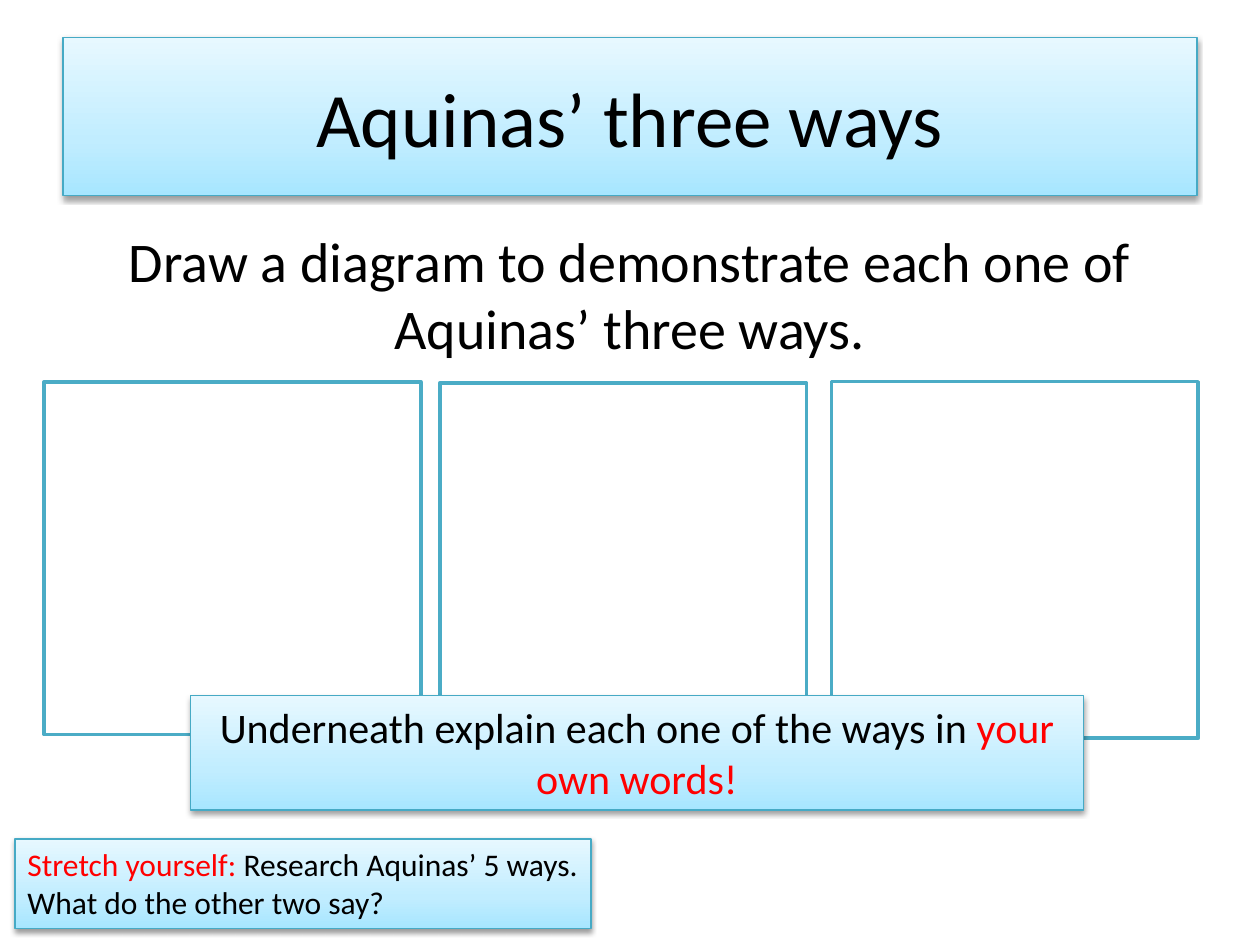
from pptx import Presentation
from pptx.dml.color import RGBColor as Rgb
from pptx.enum.shapes import MSO_SHAPE as Kind
from pptx.enum.text import MSO_ANCHOR as Anchor, PP_ALIGN as Align
from pptx.oxml import parse_xml
from pptx.oxml.ns import nsdecls, qn
from pptx.util import Inches, Pt

BLACK = Rgb(0x00, 0x00, 0x00)
WHITE = Rgb(0xFF, 0xFF, 0xFF)
RED = Rgb(0xFF, 0x00, 0x00)
TEAL = Rgb(0x4B, 0xAC, 0xC6)
EDGE = Rgb(0x46, 0xAA, 0xC5)
# Gradient stops, from the bottom of a panel to its top
STOPS = (
    (0, Rgb(0xA7, 0xE6, 0xFF)),
    (35, Rgb(0xC1, 0xED, 0xFF)),
    (100, Rgb(0xE7, 0xF8, 0xFF)),
)
FONT = "Calibri"
WIDE, HIGH = Inches(10), Inches(7.5)


def place(left, top, width, height):
    """Turn percentages of the slide's size into lengths."""
    sides = zip((left, top, width, height), (WIDE, HIGH) * 2)
    return [round(share * full / 100) for share, full in sides]


def write(shape, runs, size, align=Align.CENTER, anchor=Anchor.TOP, gap=0):
    frame = shape.text_frame
    frame.word_wrap = True
    frame.vertical_anchor = anchor
    para = frame.paragraphs[0]
    para.alignment = align
    para.space_before = Pt(gap)
    for text, color in runs:
        run = para.add_run()
        run.text = text
        run.font.name = FONT
        run.font.size = Pt(size)
        run.font.color.rgb = color


def add_box(slide, area, edge, weight):
    box = slide.shapes.add_shape(Kind.RECTANGLE, *place(*area))
    box.shadow.inherit = False
    box.fill.solid()
    box.fill.fore_color.rgb = WHITE
    box.line.color.rgb = edge
    box.line.width = Pt(weight)
    return box


def add_panel(slide, area, runs, size, **style):
    """A box with a blue gradient, a soft shadow and text."""
    box = add_box(slide, area, EDGE, 0.75)
    props = box._element.spPr
    stops = "".join(
        f'<a:gs pos="{pos * 1000}"><a:srgbClr val="{color}"/></a:gs>'
        for pos, color in STOPS
    )
    grad = parse_xml(
        f'<a:gradFill {nsdecls("a")} rotWithShape="1"><a:gsLst>{stops}</a:gsLst>'
        '<a:lin ang="16200000" scaled="0"/></a:gradFill>'
    )
    props.replace(props.find(qn("a:solidFill")), grad)
    shade = parse_xml(
        f'<a:outerShdw {nsdecls("a")} blurRad="{Pt(3.1)}" dist="{Pt(1.6)}" '
        'dir="5400000" rotWithShape="0"><a:srgbClr val="000000">'
        '<a:alpha val="38000"/></a:srgbClr></a:outerShdw>'
    )
    props.find(qn("a:effectLst")).append(shade)
    write(box, runs, size, **style)


def add_text(slide, area, runs, size, **style):
    box = slide.shapes.add_textbox(*place(*area))
    write(box, runs, size, **style)


def main():
    deck = Presentation()
    deck.slide_width, deck.slide_height = WIDE, HIGH
    slide = deck.slides.add_slide(deck.slide_layouts[6])

    # Title and task
    add_panel(slide, (5, 4, 90, 16.67), [("Aquinas’ three ways", BLACK)], 44,
              anchor=Anchor.MIDDLE)
    task = "Draw a diagram to demonstrate each one of Aquinas’ three ways."
    add_text(slide, (5, 23.33, 90, 66), [(task, BLACK)], 32, gap=6.4)

    # Empty frames for the three diagrams
    for area in (
        (3.5, 40.4, 29.9, 37.33),
        (34.9, 40.53, 29.1, 37.73),
        (66, 40.4, 29.1, 37.73),
    ):
        add_box(slide, area, TEAL, 2)

    # Instruction and extra task
    add_panel(slide, (15.1, 73.6, 70.9, 12.13), [
        ("Underneath explain each one of the ways in ", BLACK),
        ("your own words!", RED),
    ], 24)
    add_panel(slide, (1.2, 88.8, 45.7, 9.47), [
        ("Stretch yourself: ", RED),
        ("Research Aquinas’ 5 ways. What do the other two say?", BLACK),
    ], 18, align=Align.LEFT)

    deck.save("out.pptx")


if __name__ == "__main__":
    main()
